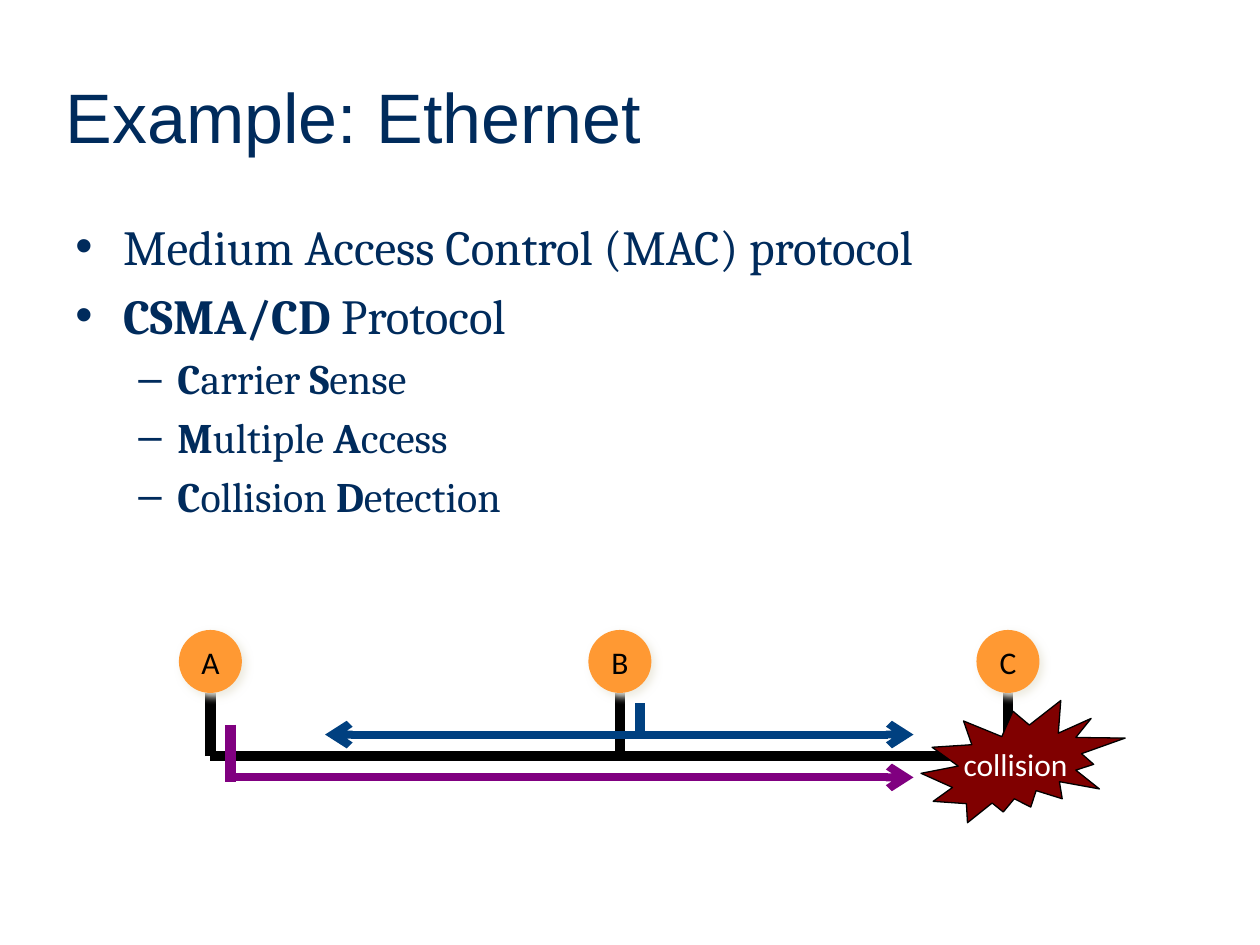
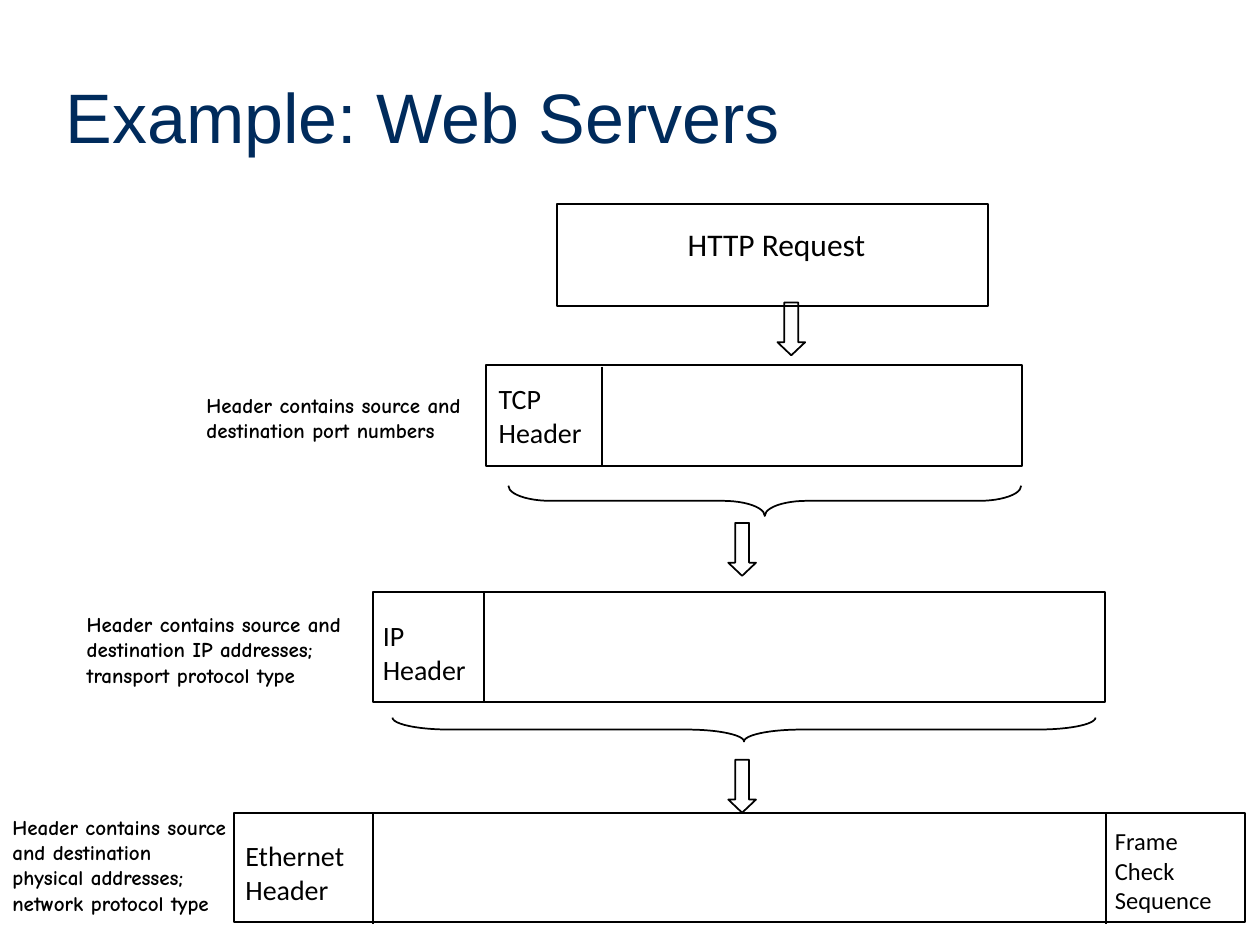
from dataclasses import dataclass

from lxml import etree
from pptx import Presentation
from pptx.dml.color import RGBColor
from pptx.enum import shapes, text
from pptx.oxml import ns
from pptx.util import Inches, Pt

NAVY = RGBColor(0x00, 0x2B, 0x5C)
BLACK = RGBColor(0x00, 0x00, 0x00)
WHITE = RGBColor(0xFF, 0xFF, 0xFF)
ORANGE = RGBColor(0xFF, 0x99, 0x33)
CREAM = RGBColor(0xEE, 0xEC, 0xE1)
MAROON = RGBColor(0x80, 0x00, 0x00)
BLUE = RGBColor(0x00, 0x40, 0x80)
PURPLE = RGBColor(0x80, 0x00, 0x80)

TITLE_FONT, BODY_FONT = "Arial", "Cambria"
LABEL_FONT, NOTE_FONT = "Calibri", "Comic Neue"
SHAPE = shapes.MSO_SHAPE
TOP, MIDDLE = text.MSO_ANCHOR.TOP, text.MSO_ANCHOR.MIDDLE
LEFT, CENTER = text.PP_ALIGN.LEFT, text.PP_ALIGN.CENTER


@dataclass(frozen=True)
class Box:
    left: float
    top: float
    width: float
    height: float

    def inches(self) -> tuple:
        return tuple(Inches(v) for v in (self.left, self.top, self.width, self.height))


@dataclass(frozen=True)
class Signal:
    start: tuple
    end: tuple
    color: RGBColor
    width: float = 6
    arrow: bool = False


@dataclass(frozen=True)
class Label:
    words: str
    box: Box
    size: int = 16


@dataclass(frozen=True)
class Packet:
    """One protocol layer: its frame, field dividers, field labels and side note."""
    frame: Box
    dividers: tuple
    fields: tuple
    note: str
    note_box: Box


@dataclass(frozen=True)
class Bullet:
    words: str
    size: int
    mark: str
    margin: float
    hang: float


MAIN = dict(size=28, mark="•", margin=0.38, hang=0.38)
SUB = dict(size=24, mark="–", margin=0.81, hang=0.31)
BULLETS = [
    Bullet("Medium Access Control (MAC) protocol", **MAIN),
    Bullet("*CSMA/CD *Protocol", **MAIN),
    Bullet("*C*arrier *S*ense", **SUB),
    Bullet("*M*ultiple *A*ccess", **SUB),
    Bullet("*C*ollision *D*etection", **SUB),
]

STATIONS = {"A": 1.67, "B": 4.92, "C": 8}
STATION_SIZE = 0.5
STATION_TOP, CABLE_Y = 5, 6
SIGNALS = [
    Signal((4.92, 5.83), (7.25, 5.83), BLUE, 4.5, True),
    Signal((4.92, 5.83), (2.58, 5.83), BLUE, 4.5, True),
    Signal((5.08, 5.58), (5.08, 5.83), BLUE),
    Signal((1.83, 6.17), (7.25, 6.17), PURPLE, 4.5, True),
    Signal((1.83, 5.75), (1.83, 6.21), PURPLE),
]

PACKETS = [
    Packet(Box(3.86, 2.9, 4.25, 0.8), (4.78,),
           (Label("TCP Header", Box(3.86, 2.98, 1.03, 0.63)),),
           "Header contains source and destination port numbers",
           Box(1.54, 2.96, 2.31, 0.71)),
    Packet(Box(2.96, 4.7, 5.81, 0.87), (3.84,),
           (Label("IP Header", Box(2.94, 4.86, 0.99, 0.63)),),
           "Header contains source and destination IP addresses; transport protocol type",
           Box(0.59, 4.7, 2.36, 0.91)),
    Packet(Box(1.86, 6.45, 8.02, 0.87), (2.96, 8.78),
           (Label("Ethernet Header", Box(1.85, 6.61, 1.16, 0.63)),
            Label("Frame Check Sequence", Box(8.75, 6.51, 1.13, 0.81), 14)),
           "Header contains source and destination physical addresses; network protocol type",
           Box(0, 6.31, 1.9, 1.11)),
]
DOWN_ARROWS = [(6.17, 2.4), (5.78, 4.15), (5.78, 6.03)]
BRACES = [(Box(5.95, 1.94, 0.24, 4.07), 1.387), (Box(5.81, 3, 0.19, 5.58), 2.393)]


def add_xml(parent, tag: str, **attributes: str):
    return etree.SubElement(parent, ns.qn(tag), attributes)


def write(paragraph, words: str, *, font: str = LABEL_FONT, size: float = 18,
          color: RGBColor = BLACK, bold: bool = False, align=LEFT) -> None:
    """Write words into a paragraph; stretches between asterisks are bold."""
    paragraph.alignment = align
    for index, part in enumerate(words.split("*")):
        if part:
            run = paragraph.add_run()
            run.text = part
            run.font.name, run.font.size = font, Pt(size)
            run.font.color.rgb = color
            run.font.bold = bold or index % 2 == 1


def add_text(slide, box: Box, words: str, *, anchor=TOP, wrap: bool = True, **style):
    frame = slide.shapes.add_textbox(*box.inches()).text_frame
    frame.word_wrap, frame.vertical_anchor = wrap, anchor
    write(frame.paragraphs[0], words, **style)


def add_figure(slide, kind, box: Box, *, fill: RGBColor | None = None,
               line: RGBColor | None = BLACK, width: float = 1, adjust: tuple = ()):
    figure = slide.shapes.add_shape(kind, *box.inches())
    figure.shadow.inherit = False
    for index, value in enumerate(adjust):
        figure.adjustments[index] = value
    if fill is None:
        figure.fill.background()
    else:
        figure.fill.solid()
        figure.fill.fore_color.rgb = fill
    if line is None:
        figure.line.fill.background()
    else:
        figure.line.color.rgb = line
        figure.line.width = Pt(width)
    return figure


def label_figure(figure, words: str, color: RGBColor) -> None:
    frame = figure.text_frame
    frame.word_wrap, frame.vertical_anchor = False, MIDDLE
    write(frame.paragraphs[0], words, color=color, align=CENTER)


def add_line(slide, signal: Signal) -> None:
    ends = (Inches(v) for v in (*signal.start, *signal.end))
    line = slide.shapes.add_connector(shapes.MSO_CONNECTOR.STRAIGHT, *ends)
    line.line.color.rgb = signal.color
    line.line.width = Pt(signal.width)
    if signal.arrow:
        add_xml(line.line._ln, "a:tailEnd", type="arrow")
    add_xml(line._element.spPr, "a:effectLst")


def add_soft_shadow(figure, color: RGBColor) -> None:
    effects = figure._element.spPr.find(ns.qn("a:effectLst"))
    shadow = add_xml(effects, "a:outerShdw", blurRad=str(Pt(5)), dist=str(Pt(2.8)),
                     dir=str(45 * 60000), algn="ctr", rotWithShape="0")
    add_xml(shadow, "a:srgbClr", val=str(color))


def add_titled_slide(deck, words: str):
    slide = deck.slides.add_slide(deck.slide_layouts[5])
    title = slide.shapes.title
    title.left, title.top, title.width, title.height = Box(0.42, 0.42, 9.08, 1).inches()
    title.text_frame.vertical_anchor = MIDDLE
    write(title.text_frame.paragraphs[0], words, font=TITLE_FONT, size=40, color=NAVY)
    return slide


def add_bullets(slide, box: Box, bullets: list[Bullet]) -> None:
    frame = slide.shapes.add_textbox(*box.inches()).text_frame
    frame.word_wrap = True
    for index, bullet in enumerate(bullets):
        paragraph = frame.add_paragraph() if index else frame.paragraphs[0]
        properties = paragraph._p.get_or_add_pPr()
        properties.set("marL", str(Inches(bullet.margin)))
        properties.set("indent", str(-Inches(bullet.hang)))
        add_xml(properties, "a:buFont", typeface="Arial")
        add_xml(properties, "a:buChar", char=bullet.mark)
        if index:
            paragraph.space_before = Pt(round(bullet.size * 0.2, 1))
        write(paragraph, bullet.words, font=BODY_FONT, size=bullet.size, color=NAVY)


def build_ethernet(deck) -> None:
    slide = add_titled_slide(deck, "Example: Ethernet")
    add_bullets(slide, Box(0.5, 1.67, 9, 5.03), BULLETS)

    add_line(slide, Signal((STATIONS["A"], CABLE_Y), (STATIONS["C"], CABLE_Y), BLACK))
    for x in STATIONS.values():
        add_line(slide, Signal((x, CABLE_Y), (x, STATION_TOP + STATION_SIZE), BLACK))
    for name, x in STATIONS.items():
        box = Box(x - STATION_SIZE / 2, STATION_TOP, STATION_SIZE, STATION_SIZE)
        station = add_figure(slide, SHAPE.OVAL, box, fill=ORANGE, line=None)
        add_soft_shadow(station, CREAM)
        label_figure(station, name, BLACK)

    collision = add_figure(slide, SHAPE.EXPLOSION2, Box(7.31, 5.56, 1.62, 0.97),
                           fill=MAROON, width=0.75)
    label_figure(collision, "collision", WHITE)
    for signal in SIGNALS:
        add_line(slide, signal)


def add_packet(slide, packet: Packet) -> None:
    frame = packet.frame
    add_figure(slide, SHAPE.RECTANGLE, frame)
    for x in packet.dividers:
        add_line(slide, Signal((x, frame.top + 0.01), (x, frame.top + frame.height + 0.01),
                               BLACK, 1))
    for field in packet.fields:
        add_text(slide, field.box, field.words, size=field.size)
    add_text(slide, packet.note_box, packet.note, anchor=MIDDLE,
             font=NOTE_FONT, size=12, bold=True)


def build_web_servers(deck) -> None:
    slide = add_titled_slide(deck, "Example: Web Servers")
    add_figure(slide, SHAPE.RECTANGLE, Box(4.42, 1.62, 3.42, 0.81))
    add_text(slide, Box(5.36, 1.74, 1.69, 0.4), "HTTP Request", wrap=False)
    for packet in PACKETS:
        add_packet(slide, packet)
    for left, top in DOWN_ARROWS:
        add_figure(slide, SHAPE.DOWN_ARROW, Box(left, top, 0.22, 0.42), adjust=(0.5, 0.474))
    for box, curl in BRACES:
        brace = add_figure(slide, SHAPE.LEFT_BRACE, box, adjust=(curl, 0.5))
        brace.rotation = 270


def main() -> None:
    deck = Presentation()
    deck.slide_width, deck.slide_height = Inches(10), Inches(7.5)
    build_ethernet(deck)
    build_web_servers(deck)
    deck.save("out.pptx")


if __name__ == "__main__":
    main()
